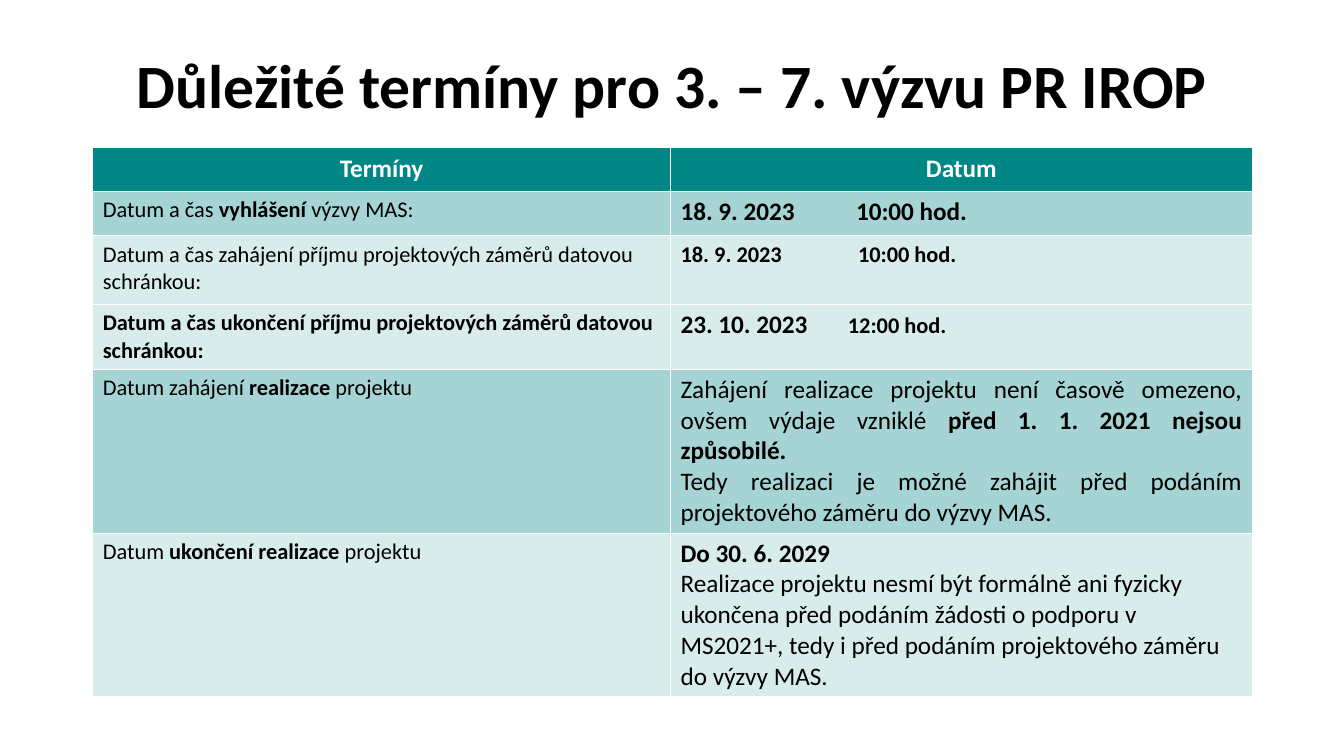
from lxml import etree
from pptx import Presentation
from pptx import util as u
from pptx.dml.color import RGBColor
from pptx.enum import text
from pptx.oxml import ns

BLACK = RGBColor(0x00, 0x00, 0x00)
WHITE = RGBColor(0xFF, 0xFF, 0xFF)
TEAL = RGBColor(0x00, 0x86, 0x85)
FONT = "Calibri"
LEFT, CENTER, JUSTIFY = text.PP_ALIGN.LEFT, text.PP_ALIGN.CENTER, text.PP_ALIGN.JUSTIFY
STRONG, PALE = 35, 15

TITLE = "Důležité termíny pro 3. – 7. výzvu PR IROP"
HEADINGS = ["Termíny", "Datum"]
COLUMN_WIDTHS = [5.73, 5.77]
ROW_HEIGHTS = [0.44, 0.44, 0.68, 0.64, 1.62, 1.62]

# Each run is (words, size, bold).
DEADLINES = [
    (STRONG, LEFT, 1.74,
     [("Datum a čas ", 16, False), ("vyhlášení", 16, True), (" výzvy MAS:", 16, False)],
     [[("18. 9. 2023\t10:00 hod.", 18, True)]]),
    (PALE, LEFT, 1.76,
     [("Datum a čas zahájení příjmu projektových záměrů datovou schránkou:", 16, False)],
     [[("18. 9. 2023\t10:00 hod.", 16, True)]]),
    (PALE, LEFT, 1.66,
     [("Datum a čas ukončení příjmu projektových záměrů datovou schránkou:", 16, True)],
     [[("23. 10. 2023\t", 18, True), ("12:00 hod.", 16, True)]]),
    (STRONG, JUSTIFY, None,
     [("Datum zahájení ", 16, False), ("realizace", 16, True), (" projektu", 16, False)],
     [[("Zahájení realizace projektu není časově omezeno, ovšem výdaje vzniklé ", 18, False),
       ("před 1. 1. 2021 nejsou způsobilé.", 18, True)],
      [("Tedy realizaci je možné zahájit před podáním projektového záměru do výzvy MAS.",
        18, False)]]),
    (PALE, LEFT, None,
     [("Datum ", 16, False), ("ukončení realizace", 16, True), (" projektu", 16, False)],
     [[("Do 30. 6. 2029", 18, True)],
      [("Realizace projektu nesmí být formálně ani fyzicky ukončena před podáním žádosti "
        "o podporu v MS2021+, tedy i před podáním projektového záměru do výzvy MAS.",
        18, False)]]),
]


def fill_cell(cell, paragraphs, color, align=LEFT, opacity=100, tab=None):
    cell.fill.solid()
    cell.fill.fore_color.rgb = TEAL
    if opacity < 100:
        tint = cell._tc.tcPr.find(".//" + ns.qn("a:srgbClr"))
        etree.SubElement(tint, ns.qn("a:alpha"), val=str(opacity * 1000))
    frame = cell.text_frame
    for index, runs in enumerate(paragraphs):
        paragraph = frame.add_paragraph() if index else frame.paragraphs[0]
        paragraph.alignment = align
        if tab:
            stops = etree.SubElement(paragraph._p.get_or_add_pPr(), ns.qn("a:tabLst"))
            etree.SubElement(stops, ns.qn("a:tab"), pos=str(u.Inches(tab)), algn="l")
        paragraph.font.name = FONT
        paragraph.font.color.rgb = color
        for words, size, bold in runs:
            run = paragraph.add_run()
            run.text = words
            run.font.size = u.Pt(size)
            run.font.bold = bold


def add_heading(slide, left, top, width, height):
    title = slide.shapes.title
    title.left, title.top, title.width, title.height = left, top, width, height
    frame = title.text_frame
    frame.text = TITLE
    frame.vertical_anchor = text.MSO_ANCHOR.MIDDLE
    paragraph = frame.paragraphs[0]
    paragraph.alignment = CENTER
    paragraph.line_spacing = 0.9
    paragraph.font.name = FONT
    paragraph.font.size = u.Pt(44)
    paragraph.font.bold = True
    paragraph.font.color.rgb = BLACK


def add_deadlines(slide, left, top, width, height):
    table = slide.shapes.add_table(
        len(ROW_HEIGHTS), len(COLUMN_WIDTHS), left, top, width, height).table
    for column, share in zip(table.columns, COLUMN_WIDTHS):
        column.width = int(width * share / sum(COLUMN_WIDTHS))
    for row, share in zip(table.rows, ROW_HEIGHTS):
        row.height = int(height * share / sum(ROW_HEIGHTS))
    for column, heading in enumerate(HEADINGS):
        cell = table.cell(0, column)
        cell.vertical_anchor = text.MSO_ANCHOR.MIDDLE
        fill_cell(cell, [[(heading, 18, True)]], WHITE, CENTER)
    for row, (opacity, align, tab, term, date) in enumerate(DEADLINES, 1):
        fill_cell(table.cell(row, 0), [term], BLACK, opacity=opacity)
        fill_cell(table.cell(row, 1), date, BLACK, align, opacity, tab)


def main():
    deck = Presentation()
    deck.slide_width, deck.slide_height = u.Inches(13.33), u.Inches(7.5)
    slide = deck.slides.add_slide(deck.slide_layouts[5])
    left, width = u.Inches(0.92), u.Inches(11.5)
    add_heading(slide, left, u.Inches(0.4), width, u.Inches(0.95))
    add_deadlines(slide, left, u.Inches(1.46), width, u.Inches(sum(ROW_HEIGHTS)))
    deck.save("out.pptx")


if __name__ == "__main__":
    main()
